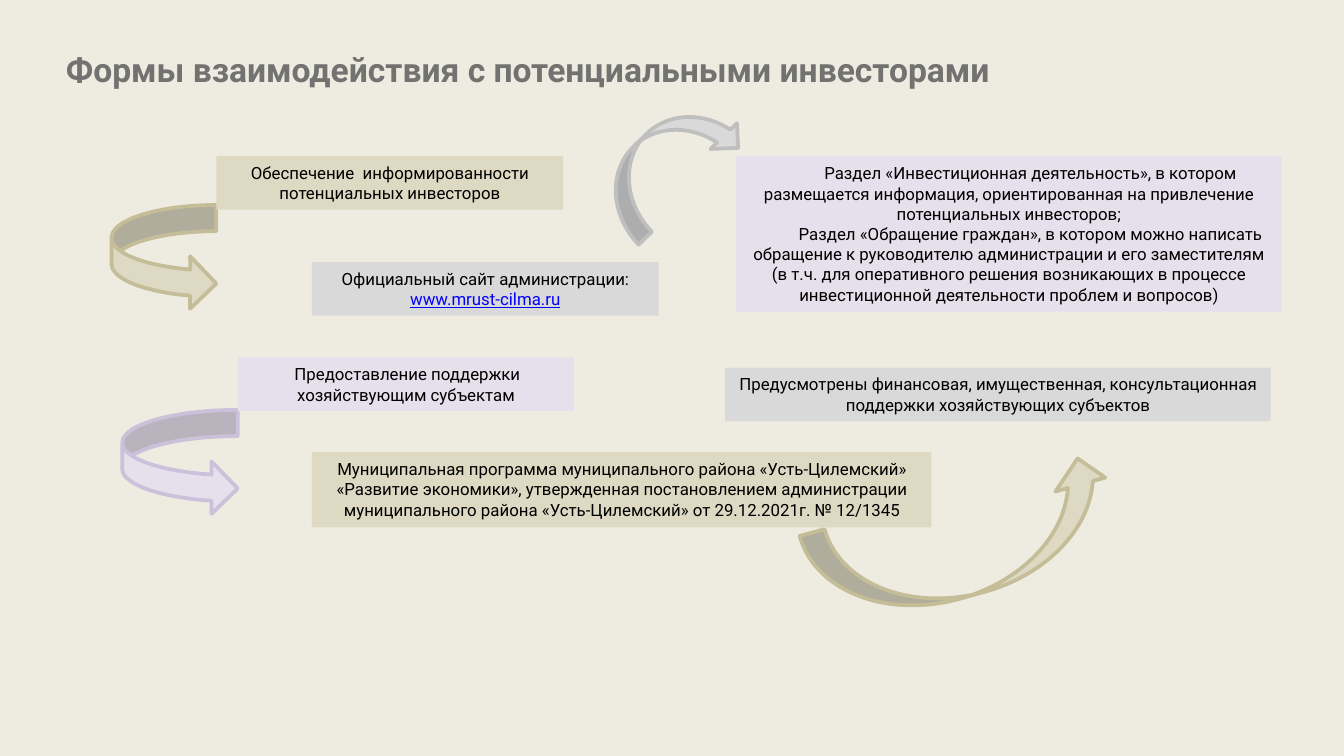
from dataclasses import dataclass

from pptx import Presentation
from pptx.dml.color import RGBColor
from pptx.enum.shapes import MSO_SHAPE
from pptx.enum.text import MSO_ANCHOR, PP_ALIGN
from pptx.util import Inches, Pt

RECT = MSO_SHAPE.RECTANGLE
CURVED_RIGHT = MSO_SHAPE.CURVED_RIGHT_ARROW
CURVED_DOWN = MSO_SHAPE.CURVED_DOWN_ARROW
CURVED_UP = MSO_SHAPE.CURVED_UP_ARROW
TOP, MIDDLE = MSO_ANCHOR.TOP, MSO_ANCHOR.MIDDLE
LEFT, CENTER = PP_ALIGN.LEFT, PP_ALIGN.CENTER


@dataclass(frozen=True)
class Theme:
    font: str = "Roboto"
    title_size: int = 18
    body_size: int = 9
    line_width: int = 2
    background: str = "EEECE1"
    title: str = "727271"
    text: str = "000000"
    link: str = "0000FF"
    # Each tone is a fill and its outline
    sand: tuple = ("DDD9C3", "C4BD97")
    lilac: tuple = ("E6E0EC", "CCC1DA")
    gray: tuple = ("D9D9D9", "BFBFBF")


THEME = Theme()
WIDTH = Inches(10)
HEIGHT = WIDTH * 9 // 16
COLUMN = ROW = WIDTH / 100  # square grid, 100 columns across the slide


def place(box, left, top, width, height):
    """Turn grid offsets inside a box into slide lengths."""
    return (round((box[0] + left) * COLUMN), round((box[1] + top) * ROW),
            round(width * COLUMN), round(height * ROW))


def rgb(value):
    return RGBColor.from_string(value)


def format_font(font, color, **values):
    values = {"name": THEME.font, "size": Pt(THEME.body_size), **values}
    for name, value in values.items():
        setattr(font, name, value)
    font.color.rgb = rgb(color)


def add_filled(s, kind, position, fill):
    sp = s.shapes.add_shape(kind, *position)
    sp.shadow.inherit = False
    sp.fill.solid()
    sp.fill.fore_color.rgb = rgb(fill)
    return sp


def add_arrow(s, kind, position, tone, rotation=0):
    fill, outline = tone
    sp = add_filled(s, kind, position, fill)
    sp.rotation = rotation
    sp.line.color.rgb = rgb(outline)
    sp.line.width = Pt(THEME.line_width)


def add_card(s, position, tone, paragraphs, anchor=TOP, indent=0, link=None):
    sp = add_filled(s, RECT, position, tone[0])
    sp.line.fill.background()
    tf = sp.text_frame
    tf.word_wrap, tf.vertical_anchor = True, anchor
    for i, text in enumerate(paragraphs):
        p = tf.add_paragraph() if i else tf.paragraphs[0]
        p.alignment = CENTER
        if indent:
            p._p.get_or_add_pPr().set("indent", str(Inches(indent)))
        r = p.add_run()
        r.text = text
        format_font(r.font, THEME.text)
    if link:
        r = p.add_run()
        r.text = link
        format_font(r.font, THEME.link, underline=True)


def set_title(s, position, text):
    sp = s.shapes.title
    sp.left, sp.top, sp.width, sp.height = position
    tf = sp.text_frame
    tf.word_wrap, tf.vertical_anchor = True, MIDDLE
    p = tf.paragraphs[0]
    p.alignment = LEFT
    r = p.add_run()
    r.text = text
    format_font(r.font, THEME.title, size=Pt(THEME.title_size), bold=True)


def add_information_region(s, box):
    add_arrow(s, CURVED_DOWN, place(box, 35.65, 0, 11.7, 5.5), THEME.gray, 315.8)
    add_arrow(s, CURVED_RIGHT, place(box, 0, 5.85, 7.8, 7.8), THEME.sand)
    add_card(s, place(box, 7.8, 2.2, 25.8, 4), THEME.sand,
             ["Обеспечение  информированности потенциальных инвесторов"])
    add_card(s, place(box, 46.45, 2.2, 40.6, 11.6), THEME.lilac, [
        "Раздел «Инвестиционная деятельность», в котором размещается "
        "информация, ориентированная на привлечение потенциальных инвесторов;",
        "Раздел «Обращение граждан», в котором можно написать обращение к "
        "руководителю администрации и его заместителям (в т.ч. для "
        "оперативного решения возникающих в процессе инвестиционной "
        "деятельности проблем и вопросов)",
    ], MIDDLE, indent=0.32)
    add_card(s, place(box, 14.9, 10.1, 25.8, 4), THEME.gray,
             ["Официальный сайт администрации: "], link="www.mrust-cilma.ru")


def add_support_region(s, box):
    add_arrow(s, CURVED_UP, place(box, 51, 10, 23.4, 7.7), THEME.sand, 344.4)
    add_arrow(s, CURVED_RIGHT, place(box, 0, 3.9, 8.6, 7.8), THEME.lilac)
    add_card(s, place(box, 8.6, 0, 25, 4), THEME.lilac,
             ["Предоставление поддержки хозяйствующим субъектам"],
             MIDDLE, indent=0.02)
    add_card(s, place(box, 44.85, 0.75, 40.6, 4), THEME.gray,
             ["Предусмотрены финансовая, имущественная, консультационная "
              "поддержки хозяйствующих субъектов"])
    add_card(s, place(box, 14.1, 7.05, 46.1, 5.6), THEME.sand,
             ["Муниципальная программа муниципального района «Усть-Цилемский» "
              "«Развитие экономики», утвержденная постановлением администрации "
              "муниципального района «Усть-Цилемский» от 29.12.2021г. № 12/1345"])


def main():
    prs = Presentation()
    prs.slide_width, prs.slide_height = WIDTH, HEIGHT
    s = prs.slides.add_slide(prs.slide_layouts.get_by_name("Title Only"))
    s.background.fill.solid()
    s.background.fill.fore_color.rgb = rgb(THEME.background)
    set_title(s, place((0, 0), 3.9, 3.15, 89.1, 4),
              "Формы взаимодействия с потенциальными инвесторами")
    add_information_region(s, (8.3, 9.4))
    add_support_region(s, (9.1, 26.6))
    prs.save("out.pptx")


if __name__ == "__main__":
    main()
